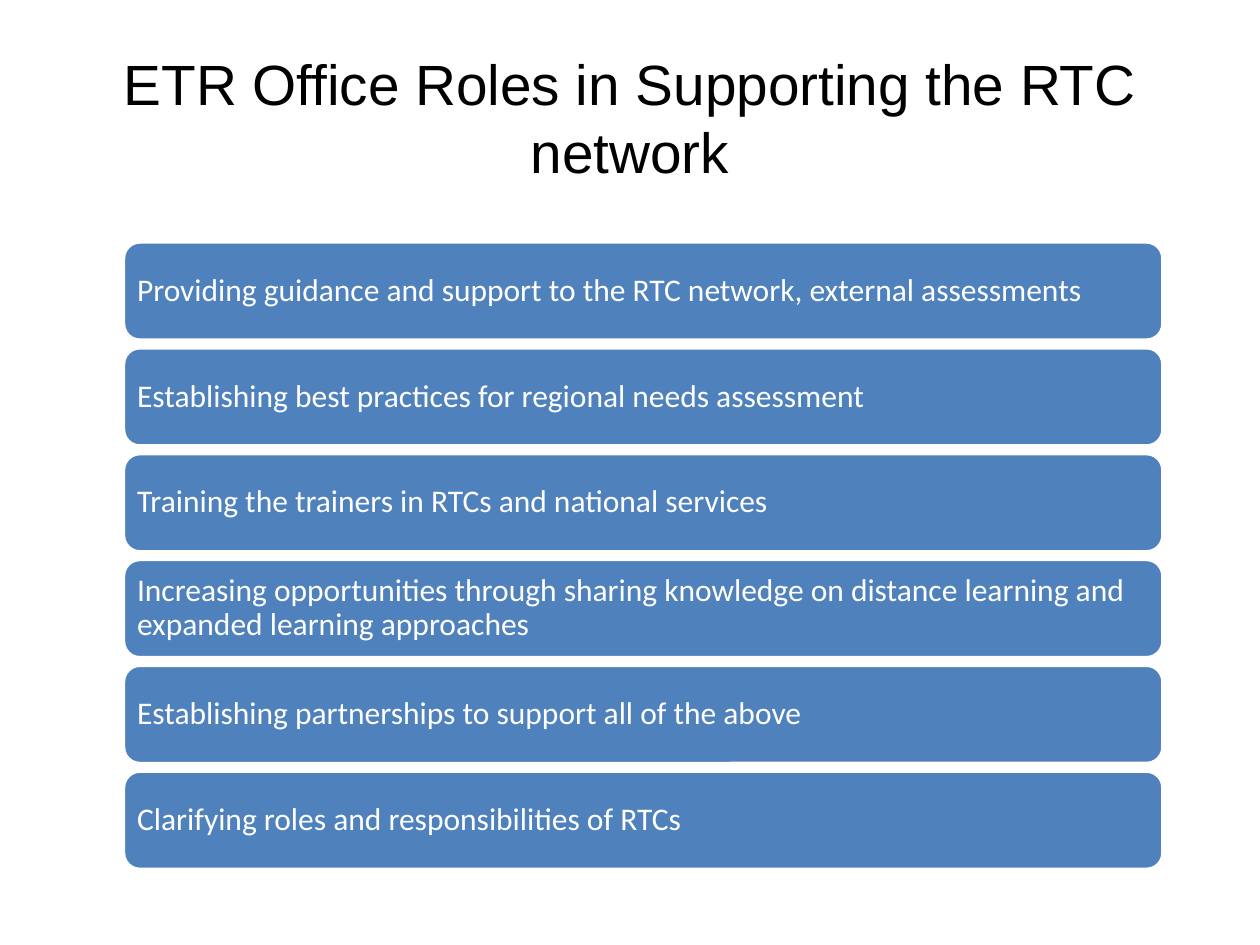
from dataclasses import dataclass

from pptx import Presentation
from pptx.dml.color import RGBColor
from pptx.enum.shapes import MSO_SHAPE
from pptx.enum.text import MSO_ANCHOR, MSO_AUTO_SIZE, PP_ALIGN
from pptx.util import Inches, Pt


@dataclass(frozen=True)
class Theme:
    title_font: str = "Arial"
    role_font: str = "Calibri"
    title_size: float = 32.4
    role_size: float = 18
    black: RGBColor = RGBColor(0x00, 0x00, 0x00)
    white: RGBColor = RGBColor(0xFF, 0xFF, 0xFF)
    blue: RGBColor = RGBColor(0x4F, 0x81, 0xBD)


THEME = Theme()
ROLES = [
    "Providing guidance and support to the RTC network, external assessments",
    "Establishing best practices for regional needs assessment",
    "Training the trainers in RTCs and national services",
    "Increasing opportunities through sharing knowledge on distance learning "
    "and expanded learning approaches",
    "Establishing partnerships to support all of the above",
    "Clarifying roles and responsibilities of RTCs",
]
FIRST_TOP = 1.92
ROLE_PITCH = 0.84


def style_text(paragraph, font_name, size, color, alignment):
    paragraph.alignment = alignment
    for run in paragraph.runs:
        run.font.name = font_name
        run.font.size = Pt(size)
        run.font.color.rgb = color


def set_title(slide, text):
    title = slide.shapes.title
    title.left, title.top = Inches(0.5), Inches(0.3)
    title.width, title.height = Inches(9), Inches(1.25)
    frame = title.text_frame
    frame.text = text
    frame.word_wrap = True
    frame.auto_size = MSO_AUTO_SIZE.NONE
    frame.vertical_anchor = MSO_ANCHOR.MIDDLE
    style_text(frame.paragraphs[0], THEME.title_font, THEME.title_size,
               THEME.black, PP_ALIGN.CENTER)


def add_role(slide, text, top):
    bar = slide.shapes.add_shape(MSO_SHAPE.ROUNDED_RECTANGLE, Inches(0.98),
                                 Inches(top), Inches(8.25), Inches(0.78))
    bar.shadow.inherit = False
    bar.fill.solid()
    bar.fill.fore_color.rgb = THEME.blue
    bar.line.color.rgb = THEME.white
    bar.line.width = Pt(2)
    frame = bar.text_frame
    frame.text = text
    frame.word_wrap = True
    frame.vertical_anchor = MSO_ANCHOR.MIDDLE
    frame.margin_left = frame.margin_right = Inches(0.07)
    frame.margin_top = frame.margin_bottom = Inches(0.07)
    frame.paragraphs[0].line_spacing = 0.9
    style_text(frame.paragraphs[0], THEME.role_font, THEME.role_size,
               THEME.white, PP_ALIGN.LEFT)


def main():
    presentation = Presentation()
    presentation.slide_width = Inches(10)
    presentation.slide_height = Inches(7.5)
    slide = presentation.slides.add_slide(presentation.slide_layouts[5])
    set_title(slide, "ETR Office Roles in Supporting the RTC network")
    for index, role in enumerate(ROLES):
        add_role(slide, role, FIRST_TOP + index * ROLE_PITCH)
    presentation.save("out.pptx")


if __name__ == "__main__":
    main()
